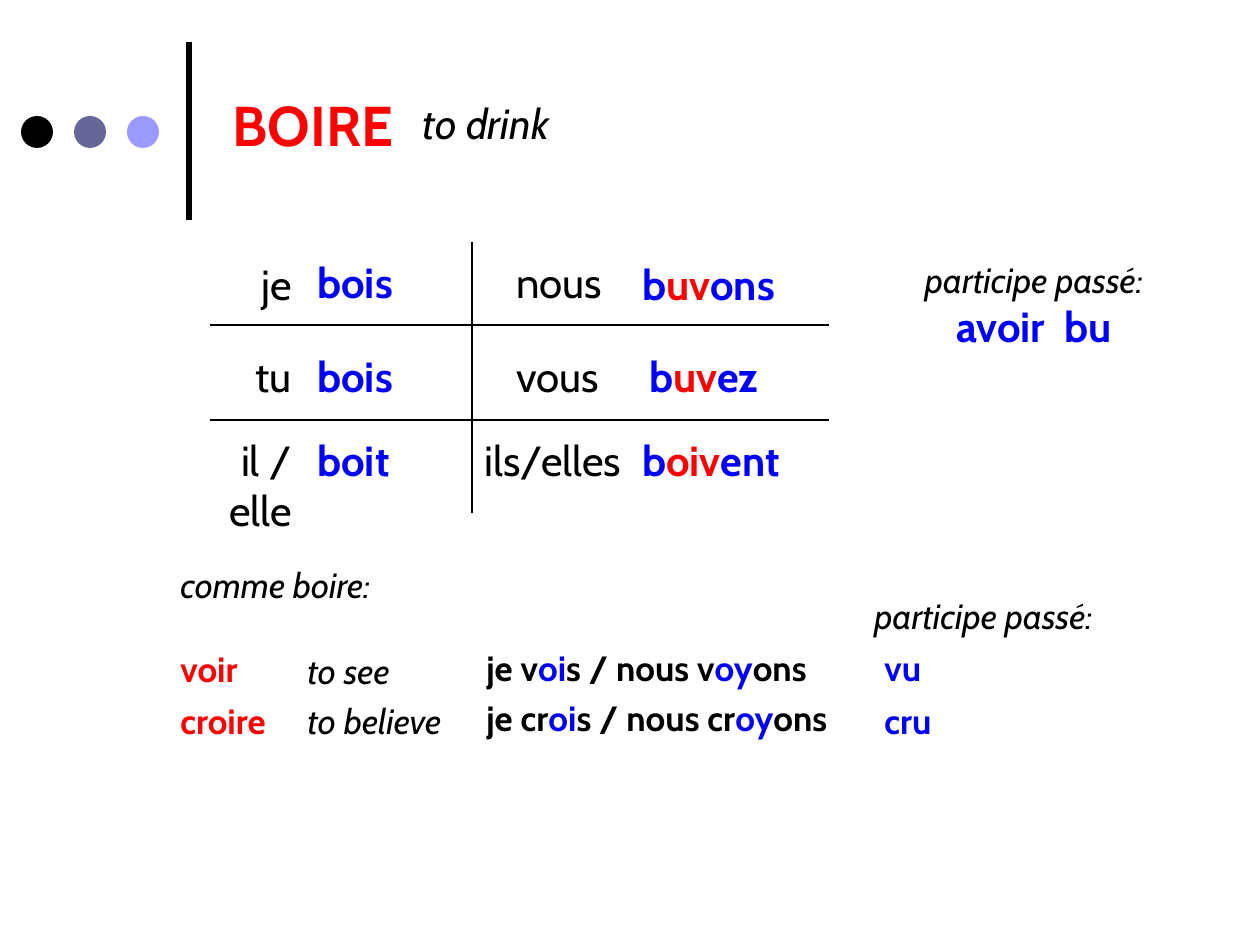
"""Build a slide on the conjugation of the French verb boire."""
from lxml import etree
from pptx import Presentation
from pptx.dml.color import RGBColor
from pptx.enum.shapes import MSO_CONNECTOR, MSO_SHAPE
from pptx.enum.text import MSO_ANCHOR, MSO_AUTO_SIZE, PP_ALIGN
from pptx.oxml.ns import qn
from pptx.util import Pt

LEFT, CENTER, RIGHT = PP_ALIGN.LEFT, PP_ALIGN.CENTER, PP_ALIGN.RIGHT
STRAIGHT = MSO_CONNECTOR.STRAIGHT
OVAL = MSO_SHAPE.OVAL
TOP = MSO_ANCHOR.TOP
FIT = MSO_AUTO_SIZE.SHAPE_TO_FIT_TEXT
EMU_PER_PX = 914400 / 126
BLACK, RED, BLUE = "000000", "FF0000", "0000FF"
rgb = RGBColor.from_string

LOOKS = {
    "title": ({"size": Pt(32), "bold": True, "italic": False}, (RED,), LEFT),
    "meaning": ({"size": Pt(24), "italic": True}, (BLACK,), LEFT),
    "singular": ({"size": Pt(24)}, (BLACK,), RIGHT),
    "plural": ({"size": Pt(24)}, (BLACK,), LEFT),
    "form": ({"size": Pt(24), "bold": True}, (BLUE, RED), LEFT),
    "participle": ({"size": Pt(24), "bold": True}, (BLUE,), CENTER),
    "label": ({"size": Pt(20), "italic": True}, (BLACK,), LEFT),
    "centred label": ({"size": Pt(20), "italic": True}, (BLACK,), CENTER),
    "verb": ({"size": Pt(20), "bold": True}, (RED,), LEFT),
    "example": ({"size": Pt(20), "bold": True}, (BLACK, BLUE), LEFT),
    "short participle": ({"size": Pt(20), "bold": True}, (BLUE,), LEFT),
}


def px(*lengths):
    return [round(length * EMU_PER_PX) for length in lengths]


def write(paragraph, text, look):
    """Write text whose colour alternates at each bar."""
    font_values, colours, paragraph.alignment = LOOKS[look]
    for index, part in enumerate(text.split("|")):
        run = paragraph.add_run()
        run.text = part
        run.font.name = "Cabin"
        run.font.color.rgb = rgb(colours[index % len(colours)])
        for name, value in font_values.items():
            setattr(run.font, name, value)


prs = Presentation()
prs.slide_width, prs.slide_height = px(1260, 945)
slide = prs.slides.add_slide(prs.slide_layouts[5])
shapes = slide.shapes

for x1, y1, x2, y2, width in (
    (189, 220, 189, 42, 3),
    (210, 325, 829, 325, 0.75),
    (210, 420, 829, 420, 0.75),
    (472, 242, 472, 513, 0.75),
):
    rule = shapes.add_connector(STRAIGHT, *px(x1, y1, x2, y2))
    rule.line.color.rgb = rgb(BLACK)
    rule.line.width = Pt(width)
    etree.SubElement(rule._element.spPr, qn("a:effectLst"))

for index, colour in enumerate((BLACK, "666699", "9999FF")):
    dot = shapes.add_shape(OVAL, *px(21 + 53 * index, 116, 32, 32))
    dot.shadow.inherit = False
    dot.fill.solid()
    dot.fill.fore_color.rgb = rgb(colour)
    dot.line.fill.background()

title = shapes.title
title.left, title.top, title.width, title.height = px(220, 84, 210, 81)
heading = title.text_frame
heading.vertical_anchor = TOP
heading.word_wrap = True
heading.auto_size = FIT
write(heading.paragraphs[0], "BOIRE", "title")

texts = [
    (410, 91, 262, 64, "to drink", "meaning"),
    (231, 252, 73, 64, "je", "singular"),
    (210, 344, 94, 64, "tu", "singular"),
    (168, 428, 136, 64, "il / elle", "singular"),
    (504, 250, 136, 64, "nous", "plural"),
    (504, 344, 136, 64, "vous", "plural"),
    (472, 428, 168, 64, "ils/elles", "plural"),
    (630, 252, 252, 64, "b|uv|ons", "form"),
    (637, 344, 252, 64, "b|uv|ez", "form"),
    (630, 428, 262, 64, "b|oiv|ent", "form"),
    (892, 252, 284, 55, "participe passé:", "centred label"),
    (892, 294, 284, 64, "avoir  bu", "participle"),
    (295, 643, 262, 55, "to see", "label"),
    (295, 693, 262, 55, "to believe", "label"),
    (862, 588, 262, 55, "participe passé:", "label"),
    (872, 640, 94, 55, "vu", "short participle"),
    (872, 693, 94, 55, "cru", "short participle"),
    (474, 640, 378, 55, "je v|oi|s / nous v|oy|ons", "example"),
    (474, 690, 378, 55, "je cr|oi|s / nous cr|oy|ons", "example"),
    (168, 557, 311, 297, "comme boire:", "label"),
]
for y, form in zip((250, 344, 428), ("bois", "bois", "boit")):
    texts.append((305, y, 158, 64, form, "form"))

frames = {}
for x, y, width, height, text, look in texts:
    frame = shapes.add_textbox(*px(x, y, width, height)).text_frame
    frame.word_wrap = True
    frame.auto_size = FIT
    write(frame.paragraphs[0], text, look)
    frames[text] = frame

for verb, gap in (("voir", 24), ("croire", 6)):
    paragraph = frames["comme boire:"].add_paragraph()
    paragraph.space_before = Pt(gap)
    write(paragraph, verb, "verb")

prs.save("out.pptx")
